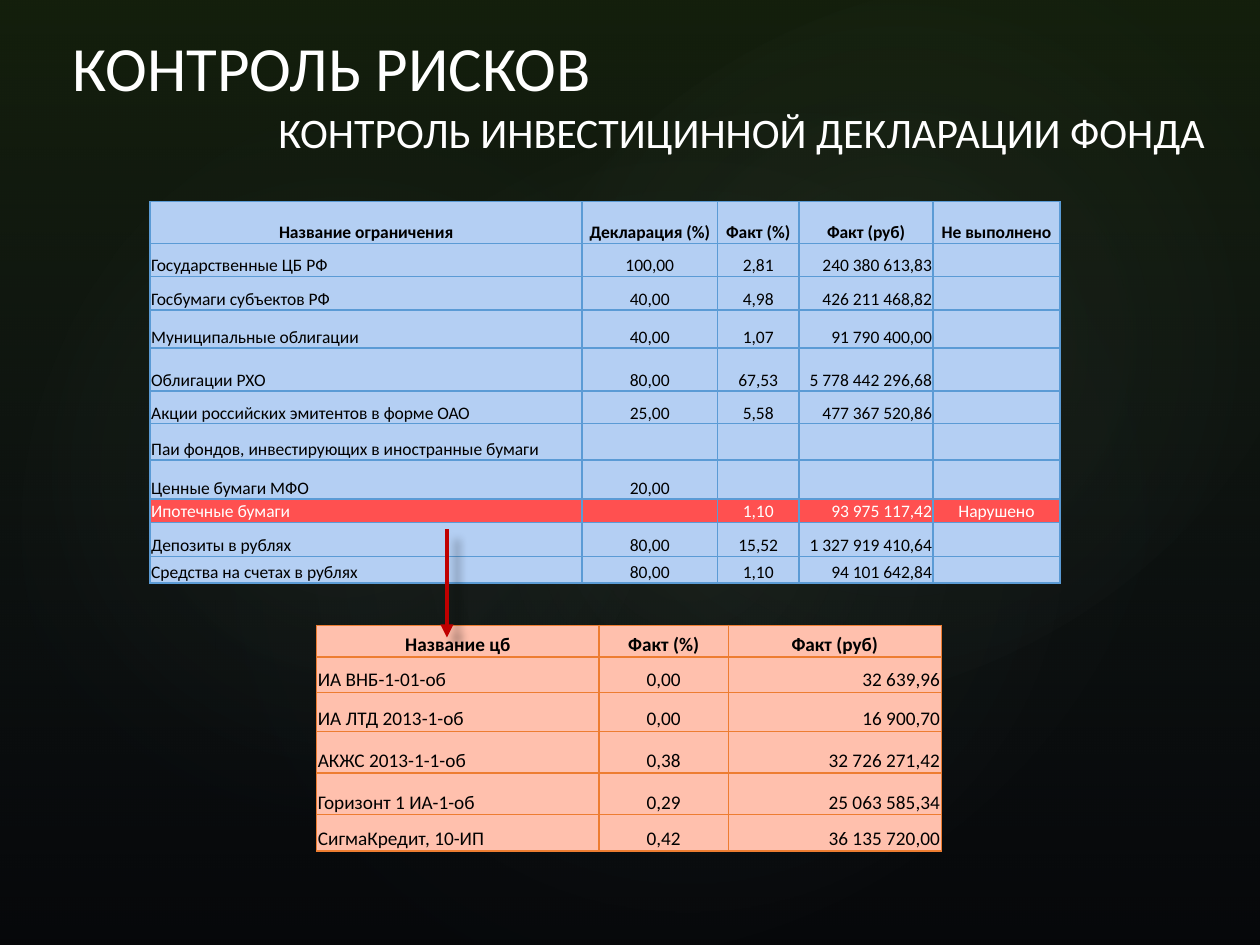
"""Build the risk control slide with two limit tables."""
from dataclasses import dataclass

from lxml.etree import SubElement
from pptx import Presentation
from pptx.dml.color import RGBColor
from pptx.enum.shapes import MSO_CONNECTOR, MSO_SHAPE
from pptx.enum.text import MSO_ANCHOR, PP_ALIGN
from pptx.oxml import parse_xml
from pptx.oxml.ns import nsdecls, qn
from pptx.util import Pt

FONT = "Calibri"
C = {
    "black": "000000", "white": "FFFFFF", "green": "385723", "slate": "44546A",
    "glow": "A9D18E", "blue": "B4CFF3", "blue_line": "5B9BD5", "alert": "FF5050",
    "peach": "FFC0AD", "orange": "ED7D31", "arrow": "C00000",
}
LEFT, CENTER, RIGHT = PP_ALIGN.LEFT, PP_ALIGN.CENTER, PP_ALIGN.RIGHT


@dataclass
class Glow:
    x: float
    y: float
    w: float
    h: float
    turn: float
    alpha: int


@dataclass
class Grid:
    x: float
    y: float
    cols: list[float]
    heights: list[float]
    size: float
    fill: str
    line: str
    aligns: list[PP_ALIGN]
    rows: list[list[str]]
    alert_row: int = -1


@dataclass
class Label:
    text: str
    x: float
    y: float
    w: float
    h: float
    size: float
    anchor: MSO_ANCHOR


GLOWS = [
    Glow(108, 82, 570, 449, 328.7, 7),
    Glow(-21.6, 92, 436, 353, 294.3, 8),
    Glow(258, 9.4, 510, 374, 328.7, 8),
]
LABELS = [
    Label("КОНТРОЛЬ РИСКОВ", 34.6, 12.2, 333.4, 51, 36, MSO_ANCHOR.BOTTOM),
    Label("КОНТРОЛЬ ИНВЕСТИЦИННОЙ ДЕКЛАРАЦИИ ФОНДА", 152, 57.6, 553, 36, 24, MSO_ANCHOR.TOP),
]
LIMITS = Grid(
    85.7, 115.2, [247, 77.2, 46.8, 76.5, 72.5],
    [24, 18.7, 19.4, 21.6, 24.6, 18.7, 20.7, 22.5, 13.3, 19.4, 15.3],
    10, "blue", "blue_line", [LEFT, CENTER, CENTER, RIGHT, CENTER],
    [
        ["Название ограничения", "Декларация (%)", "Факт (%)", "Факт (руб)", "Не выполнено"],
        ["Государственные ЦБ РФ", "100,00", "2,81", "240 380 613,83", ""],
        ["Госбумаги субъектов РФ", "40,00", "4,98", "426 211 468,82", ""],
        ["Муниципальные облигации", "40,00", "1,07", "91 790 400,00", ""],
        ["Облигации РХО", "80,00", "67,53", "5 778 442 296,68", ""],
        ["Акции российских эмитентов в форме ОАО", "25,00", "5,58", "477 367 520,86", ""],
        ["Паи фондов, инвестирующих в иностранные бумаги", "", "", "", ""],
        ["Ценные бумаги МФО", "20,00", "", "", ""],
        ["Ипотечные бумаги", "", "1,10", "93 975 117,42", "Нарушено"],
        ["Депозиты в рублях", "80,00", "15,52", "1 327 919 410,64", ""],
        ["Средства на счетах в рублях", "80,00", "1,10", "94 101 642,84", ""],
    ],
    alert_row=8,
)
PAPERS = Grid(
    180.9, 357.4, [161.5, 73.8, 121.7], [18, 20.2, 22.3, 23.8, 23.8, 20.9],
    11, "peach", "orange", [LEFT, CENTER, RIGHT],
    [
        ["Название цб", "Факт (%)", "Факт (руб)"],
        ["ИА ВНБ-1-01-об", "0,00", "32 639,96"],
        ["ИА ЛТД 2013-1-об", "0,00", "16 900,70"],
        ["АКЖС 2013-1-1-об", "0,38", "32 726 271,42"],
        ["Горизонт 1 ИА-1-об", "0,29", "25 063 585,34"],
        ["СигмаКредит, 10-ИП", "0,42", "36 135 720,00"],
    ],
)


def rgb(name: str) -> RGBColor:
    return RGBColor.from_string(C[name])


def add_gradient(s, kind, x, y, w, h, stops, shade) -> object:
    sp = s.shapes.add_shape(kind, Pt(x), Pt(y), Pt(w), Pt(h))
    sp.shadow.inherit = False
    sp.line.fill.background()
    gs = "".join(
        f'<a:gs pos="{pos * 1000}"><a:srgbClr val="{C[name]}">'
        f'<a:alpha val="{alpha * 1000}"/></a:srgbClr></a:gs>'
        for pos, name, alpha in stops)
    grad = parse_xml(f'<a:gradFill {nsdecls("a")} rotWithShape="1">'
                     f'<a:gsLst>{gs}</a:gsLst>{shade}</a:gradFill>')
    sp._element.spPr.find(qn("a:prstGeom")).addnext(grad)
    return sp


def add_backdrop(s) -> None:
    s.background.fill.solid()
    s.background.fill.fore_color.rgb = rgb("black")
    add_gradient(s, MSO_SHAPE.RECTANGLE, 0, 0, 720, 540,
                 [(0, "green", 36), (100, "slate", 10)], '<a:lin ang="5400000" scaled="0"/>')
    center = ('<a:path path="circle"><a:fillToRect l="50000" t="50000" '
              'r="50000" b="50000"/></a:path>')
    for g in GLOWS:
        sp = add_gradient(s, MSO_SHAPE.OVAL, g.x, g.y, g.w, g.h,
                          [(0, "glow", g.alpha), (58, "slate", 0)], center)
        sp.rotation = g.turn


def add_run(p, text: str, size: float, color: str, bold: bool = False) -> None:
    r = p.add_run()
    r.text = text
    r.font.name, r.font.size, r.font.bold = FONT, Pt(size), bold
    r.font.color.rgb = rgb(color)


def add_label(s, label: Label) -> None:
    tf = s.shapes.add_textbox(Pt(label.x), Pt(label.y), Pt(label.w), Pt(label.h)).text_frame
    tf.word_wrap = True
    tf.vertical_anchor = label.anchor
    add_run(tf.paragraphs[0], label.text, label.size, "white")


def style_cell(cell, fill: str, line: str) -> None:
    cell.margin_left = cell.margin_right = cell.margin_top = Pt(0.72)
    cell.margin_bottom = 0
    cell.vertical_anchor = MSO_ANCHOR.BOTTOM
    for side in ("lnL", "lnR", "lnT", "lnB"):
        ln = SubElement(cell._tc.get_or_add_tcPr(), qn(f"a:{side}"), w=str(Pt(1)))
        SubElement(SubElement(ln, qn("a:solidFill")), qn("a:srgbClr"), val=C[line])
    cell.fill.solid()
    cell.fill.fore_color.rgb = rgb(fill)


def add_grid(s, grid: Grid) -> None:
    table = s.shapes.add_table(len(grid.rows), len(grid.cols), Pt(grid.x), Pt(grid.y),
                               Pt(sum(grid.cols)), Pt(sum(grid.heights))).table
    table.first_row = table.horz_banding = False
    for col, width in zip(table.columns, grid.cols):
        col.width = Pt(width)
    for i, (row, height) in enumerate(zip(table.rows, grid.heights)):
        row.height = Pt(height)
        alert = i == grid.alert_row
        for cell, text, align in zip(row.cells, grid.rows[i], grid.aligns):
            style_cell(cell, "alert" if alert else grid.fill, grid.line)
            p = cell.text_frame.paragraphs[0]
            p.alignment = align if i else CENTER
            if text:
                add_run(p, text, grid.size, "white" if alert else "black", i == 0)
            else:
                SubElement(p._p, qn("a:endParaRPr"), sz=str(grid.size * 100))


def add_arrow(s, x: float, top: float, bottom: float) -> None:
    cn = s.shapes.add_connector(MSO_CONNECTOR.STRAIGHT, Pt(x), Pt(top), Pt(x), Pt(bottom))
    cn.line.color.rgb = rgb("arrow")
    cn.line.width = Pt(2.5)
    SubElement(cn.line._get_or_add_ln(), qn("a:tailEnd"), type="triangle")
    effects = SubElement(cn._element.spPr, qn("a:effectLst"))
    shadow = SubElement(effects, qn("a:outerShdw"), blurRad=str(Pt(5)), dist=str(Pt(8)),
                        dir="2700000", algn="ctr", rotWithShape="0")
    color = SubElement(shadow, qn("a:srgbClr"), val=C["black"])
    SubElement(color, qn("a:alpha"), val="32000")


def main() -> None:
    prs = Presentation()
    prs.slide_width, prs.slide_height = Pt(720), Pt(540)
    s = prs.slides.add_slide(prs.slide_layouts[6])
    add_backdrop(s)
    add_grid(s, LIMITS)
    for label in LABELS:
        add_label(s, label)
    add_grid(s, PAPERS)
    add_arrow(s, 255.4, 302.4, 364.3)
    prs.save("out.pptx")


if __name__ == "__main__":
    main()
